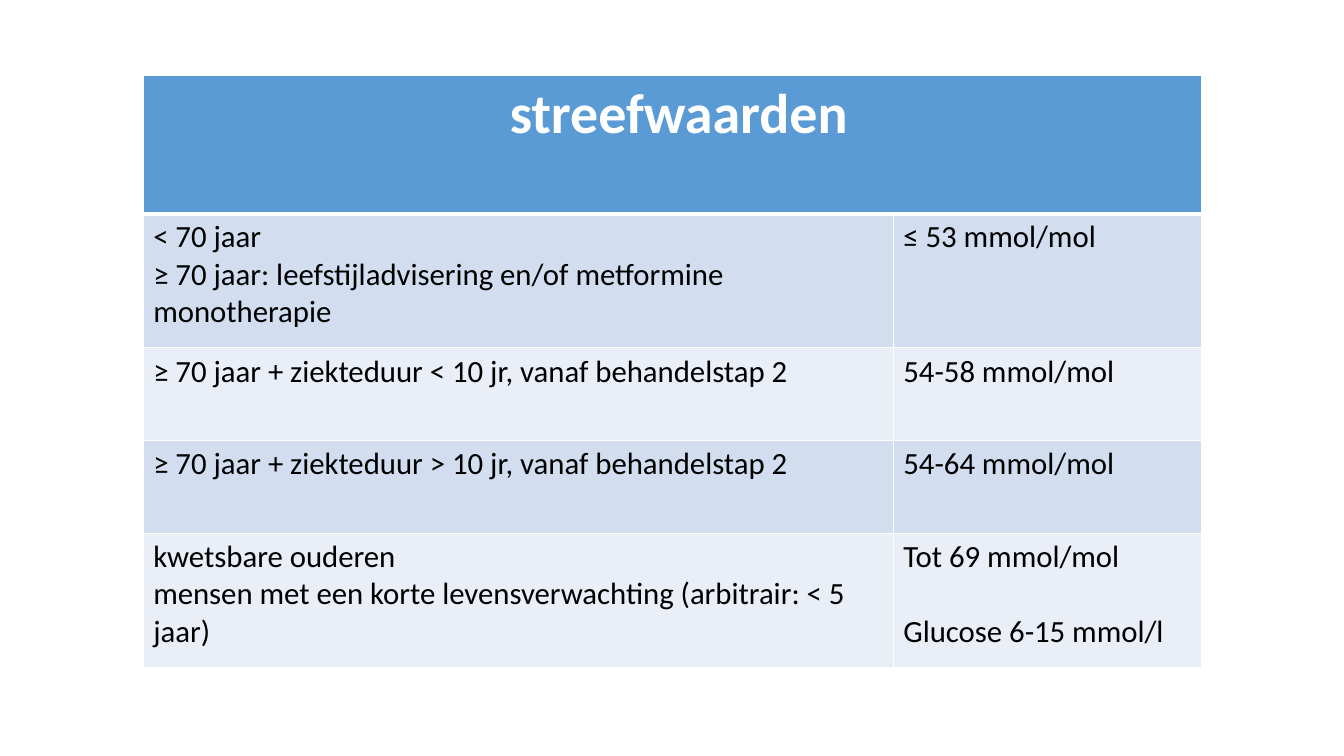
"""Builds a slide with a table of HbA1c target values by patient group."""
from dataclasses import dataclass

from lxml import etree
from pptx import Presentation
from pptx.dml.color import RGBColor
from pptx.enum.text import PP_ALIGN
from pptx.oxml.ns import qn
from pptx.util import Inches, Pt

LEFT, CENTER = PP_ALIGN.LEFT, PP_ALIGN.CENTER
BLANK_LAYOUT = 6


@dataclass(frozen=True)
class Theme:
    font: str = "Calibri"
    heading_size: int = 40
    body_size: int = 22
    line_gap: int = 27
    heading_fill: str = "5B9BD5"
    band_fills: tuple = ("D2DEEF", "EAEFF7")
    white: str = "FFFFFF"
    black: str = "000000"
    thin: int = 1
    thick: int = 3


THEME = Theme()


def write(cell, lines, size=THEME.body_size, color=THEME.black, bold=False, align=LEFT, gap=0):
    """Fill a cell with one paragraph per line; gap is the space between them."""
    frame = cell.text_frame
    for number, line in enumerate(lines):
        paragraph = frame.add_paragraph() if number else frame.paragraphs[0]
        paragraph.alignment = align
        paragraph.space_before = Pt(gap if number else 0)
        run = paragraph.add_run()
        run.text = line
        run.font.name = THEME.font
        run.font.size = Pt(size)
        run.font.bold = bold
        run.font.color.rgb = RGBColor.from_string(color)


def paint(cell, fill, top=THEME.thin, bottom=THEME.thin):
    """Give a cell white borders and a solid fill."""
    properties = cell._tc.get_or_add_tcPr()
    widths = {"a:lnL": THEME.thin, "a:lnR": THEME.thin, "a:lnT": top, "a:lnB": bottom}
    for side, width in widths.items():
        border = etree.SubElement(properties, qn(side), w=str(Pt(width)))
        solid = etree.SubElement(border, qn("a:solidFill"))
        etree.SubElement(solid, qn("a:srgbClr"), val=THEME.white)
    cell.fill.solid()
    cell.fill.fore_color.rgb = RGBColor.from_string(fill)


HEADING = " streefwaarden"
TARGETS = [
    (["< 70 jaar", "≥ 70 jaar: leefstijladvisering en/of metformine monotherapie"],
     ["≤ 53 mmol/mol"]),
    (["≥ 70 jaar + ziekteduur < 10 jr, vanaf behandelstap 2"], ["54-58 mmol/mol"]),
    (["≥ 70 jaar + ziekteduur > 10 jr, vanaf behandelstap 2"], ["54-64 mmol/mol"]),
    (["kwetsbare ouderen", "mensen met een korte levensverwachting (arbitrair: < 5 jaar)"],
     ["Tot 69 mmol/mol", "Glucose 6-15 mmol/l"]),
]
COLUMN_WIDTHS = [7.44, 3.06]
ROW_HEIGHTS = [1.37, 1.33, 0.92, 0.92, 1.33]

prs = Presentation()
prs.slide_width, prs.slide_height = Inches(13.33), Inches(7.5)
slide = prs.slides.add_slide(prs.slide_layouts[BLANK_LAYOUT])

targets_table = slide.shapes.add_table(
    len(ROW_HEIGHTS), len(COLUMN_WIDTHS), Inches(1.42), Inches(0.75),
    Inches(sum(COLUMN_WIDTHS)), Inches(sum(ROW_HEIGHTS))).table
for column, width in zip(targets_table.columns, COLUMN_WIDTHS):
    column.width = Inches(width)
for row, height in zip(targets_table.rows, ROW_HEIGHTS):
    row.height = Inches(height)

heading = targets_table.cell(0, 0)
heading.merge(targets_table.cell(0, 1))
write(heading, [HEADING], size=THEME.heading_size, color=THEME.white, bold=True, align=CENTER)
for cell in targets_table.rows[0].cells:
    paint(cell, THEME.heading_fill, bottom=THEME.thick)

for index, (patients, target) in enumerate(TARGETS):
    patients_cell, target_cell = targets_table.rows[index + 1].cells
    write(patients_cell, patients)
    write(target_cell, target, gap=THEME.line_gap)
    for cell in (patients_cell, target_cell):
        paint(cell, THEME.band_fills[index % 2], top=THEME.thin if index else THEME.thick)

prs.save("out.pptx")
